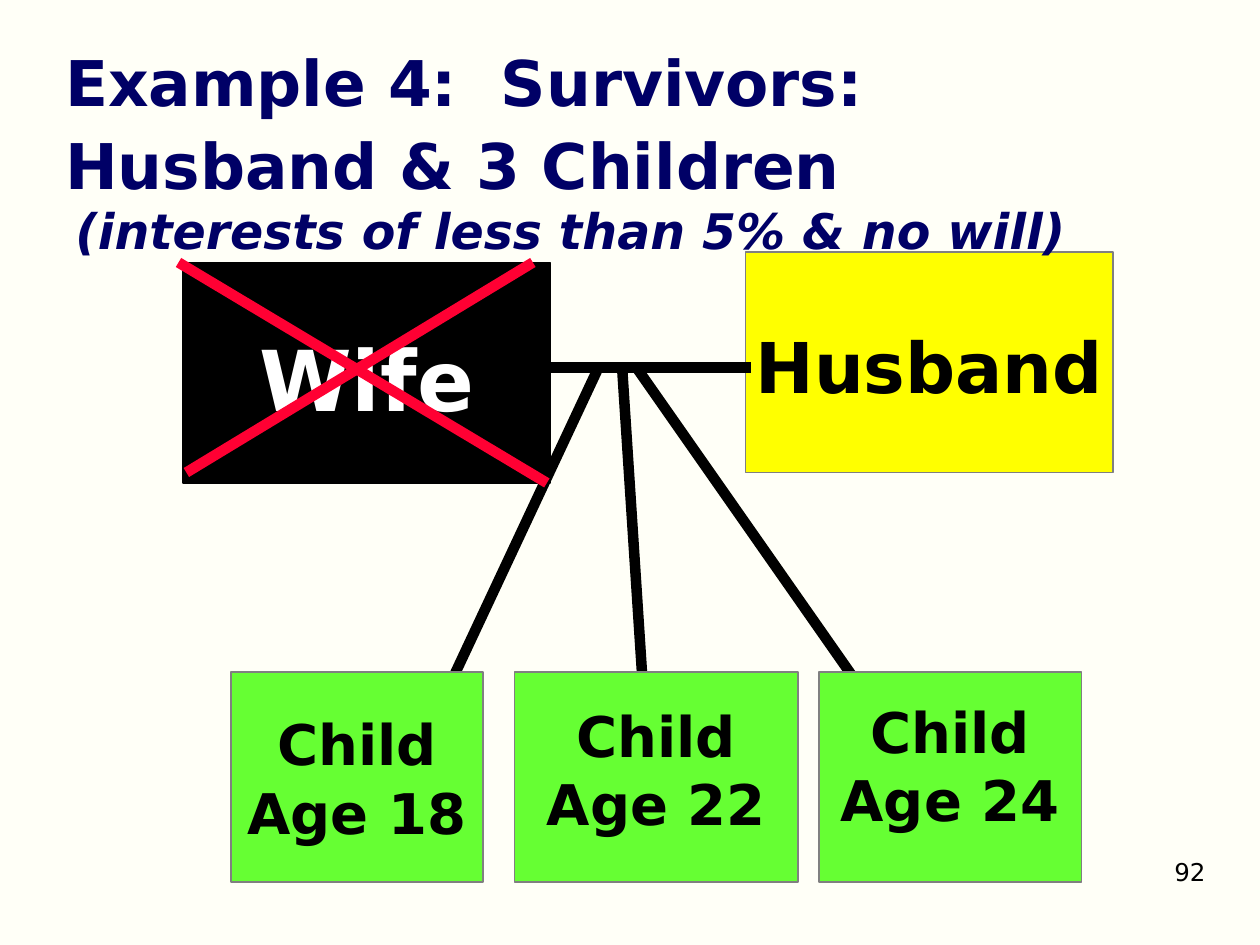
from lxml.etree import SubElement
from pptx import Presentation
from pptx.dml.color import RGBColor
from pptx.enum.shapes import MSO_CONNECTOR, MSO_SHAPE
from pptx.enum.text import MSO_ANCHOR as Anchor, MSO_AUTO_SIZE, PP_ALIGN as Align
from pptx.oxml.ns import qn
from pptx.util import Pt

FONT = "DejaVu Sans"
IVORY = RGBColor(0xFF, 0xFF, 0xF7)
NAVY = RGBColor(0x00, 0x00, 0x66)
BLACK = RGBColor(0x00, 0x00, 0x00)
WHITE = RGBColor(0xFF, 0xFF, 0xFF)
GRAY = RGBColor(0x80, 0x80, 0x80)
YELLOW = RGBColor(0xFF, 0xFF, 0x00)
GREEN = RGBColor(0x66, 0xFF, 0x33)
RED = RGBColor(0xFF, 0x00, 0x33)

# Content: all lengths in points
TITLE = "Example 4:  Survivors: Husband & 3 Children"
SUBTITLE = "(interests of less than 5% & no will)"
PAGE_NUMBER = "92"
# name, left, top, fill, outline, text colour, text size, top inset
SPOUSES = [
    ("Husband", 426, 144, YELLOW, GRAY, BLACK, 40, 7.5),
    ("Wife", 104.5, 150, BLACK, BLACK, WHITE, 48, 9),
]
SPOUSE_SIZE = (210, 126)
# age, left, width, bottom inset, start and end of the line of descent
CHILDREN = [
    (18, 132, 144, 3.6, (342, 210), (252, 402)),
    (22, 294, 162, 12.8, (355.5, 210), (368, 402)),
    (24, 468, 150, 17.4, (363, 209), (498, 402)),
]
CHILD_TOP, CHILD_HEIGHT = 384, 120
DECEASED_CROSS = [((102, 150), (312.5, 276)), ((304.5, 150), (106.5, 270))]
MARRIAGE = ((309.5, 210), (429, 210))


def write(shape, *lines, size, color=BLACK, bold=True, italic=False,
          align=Align.LEFT, anchor=Anchor.TOP, wrap=True, spacing=None,
          inset_top=3.6, inset_bottom=3.6):
    frame = shape.text_frame
    frame.word_wrap = wrap
    frame.auto_size = MSO_AUTO_SIZE.NONE
    frame.vertical_anchor = anchor
    frame.margin_top, frame.margin_bottom = Pt(inset_top), Pt(inset_bottom)
    for index, line in enumerate(lines):
        para = frame.add_paragraph() if index else frame.paragraphs[0]
        para.alignment = align
        para.space_before = Pt(0)
        if spacing:
            para.line_spacing = Pt(spacing)
        span = para.add_run()
        span.text = line
        font = span.font
        font.name, font.size, font.color.rgb = FONT, Pt(size), color
        font.bold, font.italic = bold, italic


def add_box(left, top, width, height, fill, outline):
    box = page.shapes.add_shape(
        MSO_SHAPE.RECTANGLE, Pt(left), Pt(top), Pt(width), Pt(height))
    box.shadow.inherit = False
    box.fill.solid()
    box.fill.fore_color.rgb = fill
    box.line.color.rgb = outline
    box.line.width = Pt(1)
    return box


def add_line(start, end, color=BLACK):
    line = page.shapes.add_connector(
        MSO_CONNECTOR.STRAIGHT, *(Pt(value) for value in start + end))
    line.line.color.rgb = color
    line.line.width = Pt(6)
    SubElement(line.element.spPr, qn("a:effectLst"))


def add_text(left, top, width, height, text, **style):
    box = page.shapes.add_textbox(Pt(left), Pt(top), Pt(width), Pt(height))
    write(box, text, **style)


deck = Presentation()
deck.slide_width, deck.slide_height = Pt(720), Pt(540)
page = deck.slides.add_slide(deck.slide_layouts[5])
page.background.fill.solid()
page.background.fill.fore_color.rgb = IVORY

# Title
title = page.shapes.title
title.left, title.top, title.width, title.height = Pt(30), Pt(23), Pt(648), Pt(90)
write(title, TITLE, size=36, color=NAVY, anchor=Anchor.MIDDLE, spacing=47.5,
      inset_top=0, inset_bottom=0)

# Lines of descent lie behind the boxes
for *_, start, end in CHILDREN:
    add_line(start, end)

# Family boxes
centred = dict(align=Align.CENTER, anchor=Anchor.MIDDLE, wrap=False)
for name, left, top, fill, outline, color, size, inset in SPOUSES:
    box = add_box(left, top, *SPOUSE_SIZE, fill, outline)
    write(box, name, size=size, color=color, inset_top=inset, **centred)
for age, left, width, inset, *_ in CHILDREN:
    box = add_box(left, CHILD_TOP, width, CHILD_HEIGHT, GREEN, GRAY)
    write(box, "Child", f"Age {age}", size=32, spacing=39,
          inset_bottom=inset, **centred)

# Cross over the deceased spouse, and the marriage line
for start, end in DECEASED_CROSS:
    add_line(start, end, RED)
add_line(*MARRIAGE)

# Subtitle and page number
add_text(36, 111, 600, 41, SUBTITLE, size=28, color=NAVY, italic=True)
add_text(528, 486, 168, 37, PAGE_NUMBER, size=14, bold=False, align=Align.RIGHT)

deck.save("out.pptx")
